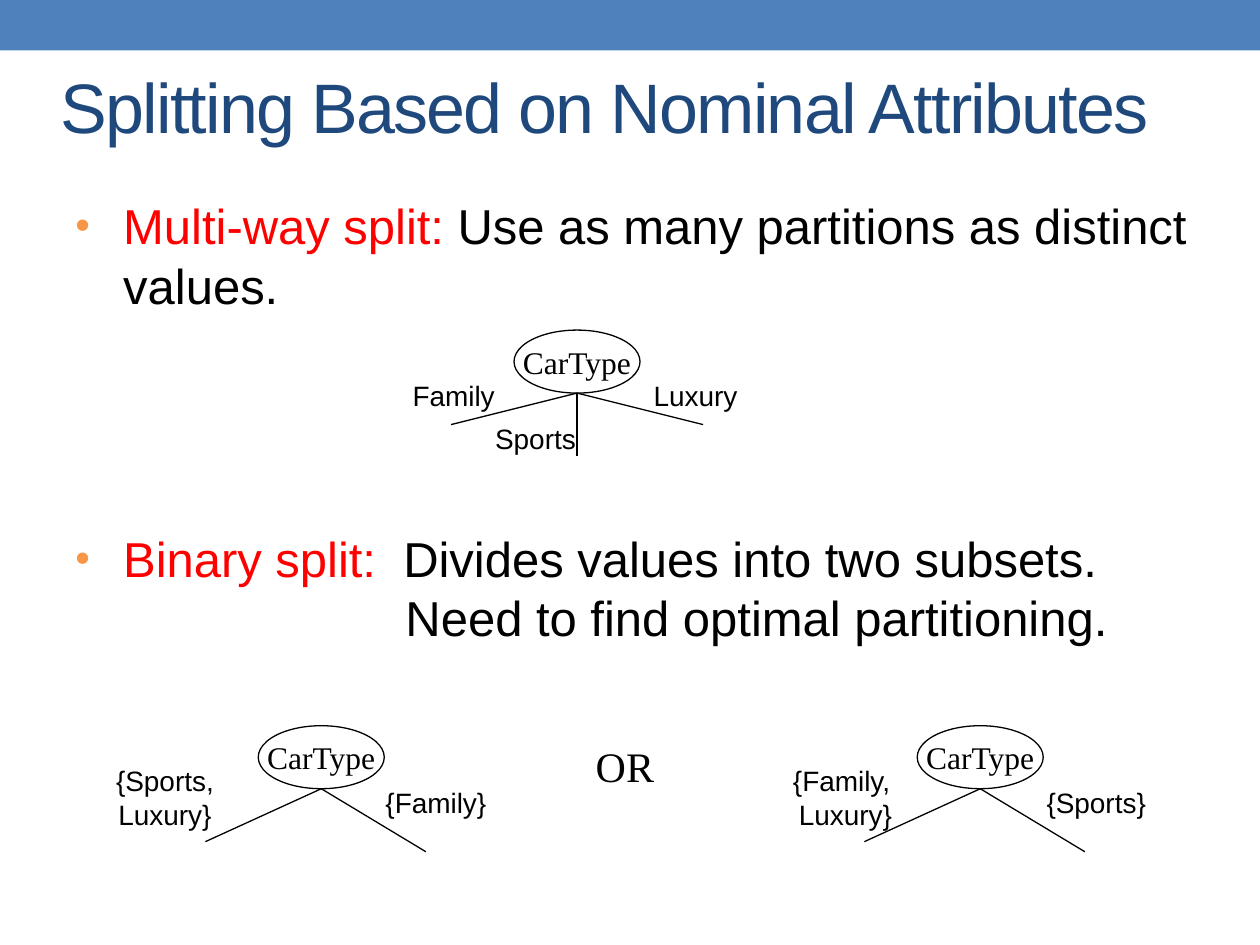
import pptx
import pptx.util
import pptx.dml.color
import pptx.enum.shapes
import pptx.enum.text
import lxml.etree

WIDTH, HEIGHT = 10, 7.5
SANS, SERIF = "Arial", "Times New Roman"
BLACK, RED, NAVY, BLUE, ORANGE, WHITE = "000000", "FF0000", "1F497D", "4F81BD", "F79646", "FFFFFF"
ROOT_WIDTH, ROOT_HEIGHT = 1, 0.5

TITLE = "Splitting Based on Nominal Attributes"
# lead, statement, left margin, space before
POINTS = [
    ("Multi-way split:", " Use as many partitions as distinct values.", 0.38, 0),
    ("Binary split:", "  Divides values into two subsets.", 0.38, 122),
    ("", "Need to find optimal partitioning.", 2.62, 0),
]
MULTI_ENDS = [(-1, 0.25), (0, 0.5), (1, 0.25)]
BINARY_ENDS = [(-0.92, 0.42), (0.83, 0.5)]
# fork point, branch ends, labels with centre offset and box size
TREES = [
    ((4.58, 3.12), MULTI_ENDS, [("Family", -0.98, 0.02, 0.85, 0.37),
                                ("Sports", -0.33, 0.36, 0.84, 0.37),
                                ("Luxury", 0.94, 0.02, 0.87, 0.37)]),
    ((7.78, 6.26), BINARY_ENDS, [("{Family, \vLuxury}", -1.07, 0.07, 1.05, 0.64),
                                 ("{Sports}", 0.92, 0.11, 0.99, 0.37)]),
    ((2.55, 6.26), BINARY_ENDS, [("{Sports,\vLuxury}", -1.24, 0.07, 1.03, 0.64),
                                 ("{Family}", 0.91, 0.11, 1, 0.37)]),
]


def inches(*lengths):
    """Convert lengths in inches to slide units."""
    return [pptx.util.Inches(length) for length in lengths]


def color(value):
    """Turn a hex string into a colour."""
    return pptx.dml.color.RGBColor.from_string(value)


def style(font, name, size, value):
    """Set the face, size and colour of a font."""
    font.name, font.size = name, pptx.util.Pt(size)
    font.color.rgb = color(value)


def write_centered(shape, text, name, size):
    """Put centred, unwrapped text into a shape."""
    frame = shape.text_frame
    frame.word_wrap = False
    frame.vertical_anchor = pptx.enum.text.MSO_ANCHOR.MIDDLE
    paragraph = frame.paragraphs[0]
    paragraph.text = text
    paragraph.alignment = pptx.enum.text.PP_ALIGN.CENTER
    for run in paragraph.runs:
        style(run.font, name, size, BLACK)
    style(paragraph.font, name, size, BLACK)


def add_label(slide, text, center_x, center_y, width, height, name=SANS, size=16):
    """Add a text label around a centre point."""
    box = slide.shapes.add_textbox(*inches(center_x - width / 2, center_y - height / 2, width, height))
    write_centered(box, text, name, size)


def add_figure(slide, preset, fill, *place):
    """Add a flat filled shape without an outline."""
    figure = slide.shapes.add_shape(preset, *inches(*place))
    figure.shadow.inherit = False
    figure.fill.solid()
    figure.fill.fore_color.rgb = color(fill)
    figure.line.fill.background()
    return figure


def outline(line):
    """Give a line the thin black stroke of the trees."""
    line.color.rgb = color(BLACK)
    line.width = pptx.util.Pt(0.75)


def add_tree(slide, fork, ends, labels):
    """Draw a root with its branches and their labels."""
    x, y = fork
    root = add_figure(slide, pptx.enum.shapes.MSO_SHAPE.OVAL, WHITE,
                      x - ROOT_WIDTH / 2, y - ROOT_HEIGHT, ROOT_WIDTH, ROOT_HEIGHT)
    outline(root.line)
    write_centered(root, "CarType", SERIF, 18)
    for dx, dy in ends:
        branch = slide.shapes.add_connector(pptx.enum.shapes.MSO_CONNECTOR.STRAIGHT,
                                            *inches(x, y, x + dx, y + dy))
        outline(branch.line)
        lxml.etree.SubElement(branch._element.spPr, pptx.oxml.ns.qn("a:effectLst"))
    for text, dx, dy, width, height in labels:
        add_label(slide, text, x + dx, y + dy, width, height)


def add_bullet(properties):
    """Give a paragraph a hanging orange bullet."""
    properties.set("indent", str(-pptx.util.Inches(0.38)))
    tint = lxml.etree.SubElement(properties, pptx.oxml.ns.qn("a:buClr"))
    lxml.etree.SubElement(tint, pptx.oxml.ns.qn("a:srgbClr"), val=ORANGE)
    lxml.etree.SubElement(properties, pptx.oxml.ns.qn("a:buSzPct"), val="85000")
    lxml.etree.SubElement(properties, pptx.oxml.ns.qn("a:buFont"), typeface=SANS)
    lxml.etree.SubElement(properties, pptx.oxml.ns.qn("a:buChar"), char="•")


def add_points(slide):
    """Write the two kinds of split as bulleted text."""
    frame = slide.shapes.add_textbox(*inches(0.5, 1.5, 9.17, 4.08)).text_frame
    frame.word_wrap = True
    for index, (lead, statement, margin, gap) in enumerate(POINTS):
        paragraph = frame.add_paragraph() if index else frame.paragraphs[0]
        paragraph.line_spacing = pptx.util.Pt(34)
        paragraph.space_before = pptx.util.Pt(gap)
        properties = paragraph._p.get_or_add_pPr()
        properties.set("marL", str(pptx.util.Inches(margin)))
        if lead:
            add_bullet(properties)
        for text, value in ((lead, RED), (statement, BLACK)):
            if text:
                run = paragraph.add_run()
                run.text = text
                style(run.font, SANS, 28, value)


def add_title(slide):
    """Place and format the slide title."""
    title = slide.shapes.title
    title.left, title.top, title.width, title.height = inches(0.38, 0.42, 9.42, 0.83)
    title.text_frame.vertical_anchor = pptx.enum.text.MSO_ANCHOR.MIDDLE
    paragraph = title.text_frame.paragraphs[0]
    paragraph.alignment = pptx.enum.text.PP_ALIGN.LEFT
    run = paragraph.add_run()
    run.text = TITLE
    style(run.font, SANS, 40, NAVY)
    run._r.get_or_add_rPr().set("spc", "-100")


def main():
    """Build the slide and save it."""
    deck = pptx.Presentation()
    deck.slide_width, deck.slide_height = inches(WIDTH, HEIGHT)
    slide = deck.slides.add_slide(deck.slide_layouts[5])
    add_figure(slide, pptx.enum.shapes.MSO_SHAPE.RECTANGLE, BLUE, 0, 0, WIDTH, 0.4)
    add_title(slide)
    add_points(slide)
    for fork, ends, labels in TREES:
        add_tree(slide, fork, ends, labels)
    add_label(slide, "OR", 4.96, 6.08, 0.66, 0.5, SERIF, 24)
    deck.save("out.pptx")


if __name__ == "__main__":
    main()
